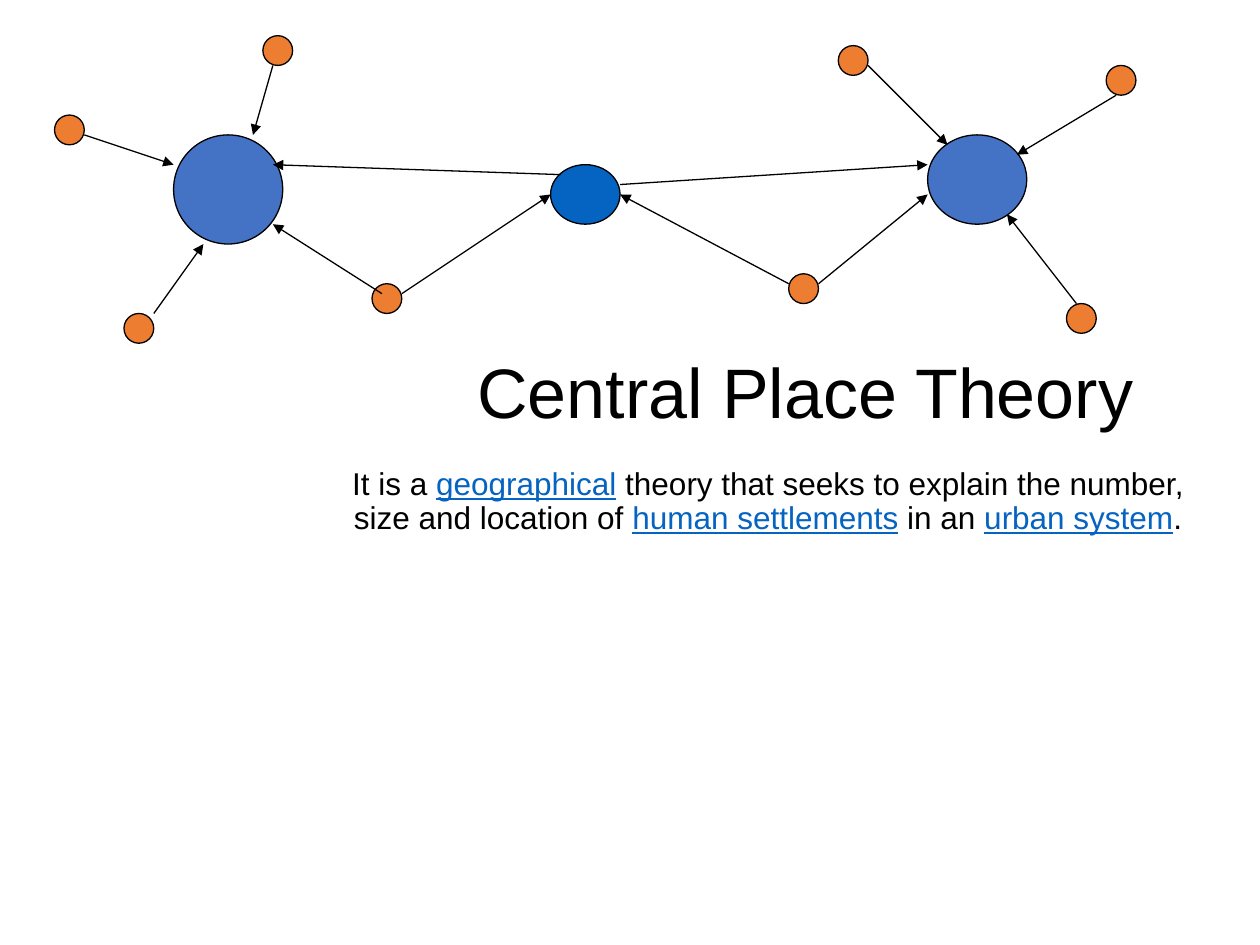
from lxml.etree import SubElement
from pptx import Presentation
from pptx.dml.color import RGBColor
from pptx.enum.shapes import MSO_CONNECTOR as CONN, MSO_SHAPE as SHAPE
from pptx.enum.text import MSO_ANCHOR as ANCHOR, MSO_AUTO_SIZE as AUTO, PP_ALIGN as ALIGN
from pptx.oxml.ns import qn
from pptx.util import Inches, Mm, Pt

COLORS = {"text": "000000", "line": "000000", "link": "0563C1",
          "city": "4472C4", "town": "0563C1", "village": "ED7D31"}


class Diagram:
    font = "Arial"
    cell = Mm(2)
    left, top = 0.5, 0.6
    line_width = Pt(0.75)

    def __init__(self, prs):
        self.width, self.height = prs.slide_width, prs.slide_height
        self.s = prs.slides.add_slide(prs.slide_layouts[0])

    def color(self, name):
        return RGBColor.from_string(COLORS[name])

    def point(self, col, row):
        return int((col + self.left) * self.cell), int((row + self.top) * self.cell)

    def stroke(self, line):
        line.color.rgb = self.color("line")
        line.width = self.line_width

    def text(self, idx, box, runs, size, anchor, before=0):
        sp = self.s.placeholders[idx]
        x, y, w, h = box
        sp.left, sp.width = int(x * self.width), int(w * self.width)
        sp.top, sp.height = int(y * self.height), int(h * self.height)
        tf = sp.text_frame
        tf.word_wrap, tf.auto_size, tf.vertical_anchor = True, AUTO.NONE, anchor
        p = tf.paragraphs[0]
        p.alignment, p.line_spacing, p.space_before = ALIGN.CENTER, 0.9, Pt(before)
        p.font.name, p.font.size = self.font, Pt(size)
        for words, kind in runs:
            r = p.add_run()
            r.text = words
            r.font.color.rgb = self.color(kind)
            r.font.underline = kind == "link"

    def place(self, kind, col, row, cols, rows):
        sp = self.s.shapes.add_shape(SHAPE.OVAL, *self.point(col, row),
                                     cols * self.cell, rows * self.cell)
        sp.shadow.inherit = False
        sp.fill.solid()
        sp.fill.fore_color.rgb = self.color(kind)
        self.stroke(sp.line)

    def arrow(self, start, end):
        c = self.s.shapes.add_connector(CONN.STRAIGHT, *self.point(*start), *self.point(*end))
        self.stroke(c.line)
        SubElement(c.line._get_or_add_ln(), qn("a:tailEnd"), type="triangle")
        SubElement(c._element.spPr, qn("a:effectLst"))


VILLAGES = [(37, 28), (26, 3), (12, 31), (5, 11), (111, 6), (107, 30), (79, 27), (84, 4)]
ARROWS = [
    ((8, 13), (17, 16)), ((27, 6), (25, 13)), ((38, 29), (27, 22)), ((15, 31), (20, 24)),
    ((82, 28), (93, 19)), ((87, 6), (95, 14)), ((112, 9), (102, 15)), ((108, 30), (101, 21)),
    ((40, 29), (55, 19)), ((79, 28), (62, 19)), ((62, 18), (93, 16)), ((56, 17), (27, 16)),
]
DEFINITION = [
    ("It is a ", "text"), ("geographical", "link"),
    (" theory that seeks to explain the number, size and location of ", "text"),
    ("human settlements", "link"), (" in an ", "text"), ("urban system", "link"), (".", "text"),
]


def main():
    prs = Presentation()
    prs.slide_width, prs.slide_height = Inches(10), Inches(7.5)
    d = Diagram(prs)
    d.text(0, (0.234, 0.251, 0.81, 0.215), [("Central Place Theory", "text")], 40, ANCHOR.BOTTOM)
    d.text(1, (0.25, 0.489, 0.719, 0.16), DEFINITION, 18, ANCHOR.TOP, before=7.5)
    d.place("city", 93, 13, 10, 9)
    d.place("city", 17, 13, 11, 11)
    for col, row in VILLAGES:
        d.place("village", col, row, 3, 3)
    d.place("town", 55, 16, 7, 6)
    for start, end in ARROWS:
        d.arrow(start, end)
    prs.save("out.pptx")


if __name__ == "__main__":
    main()
